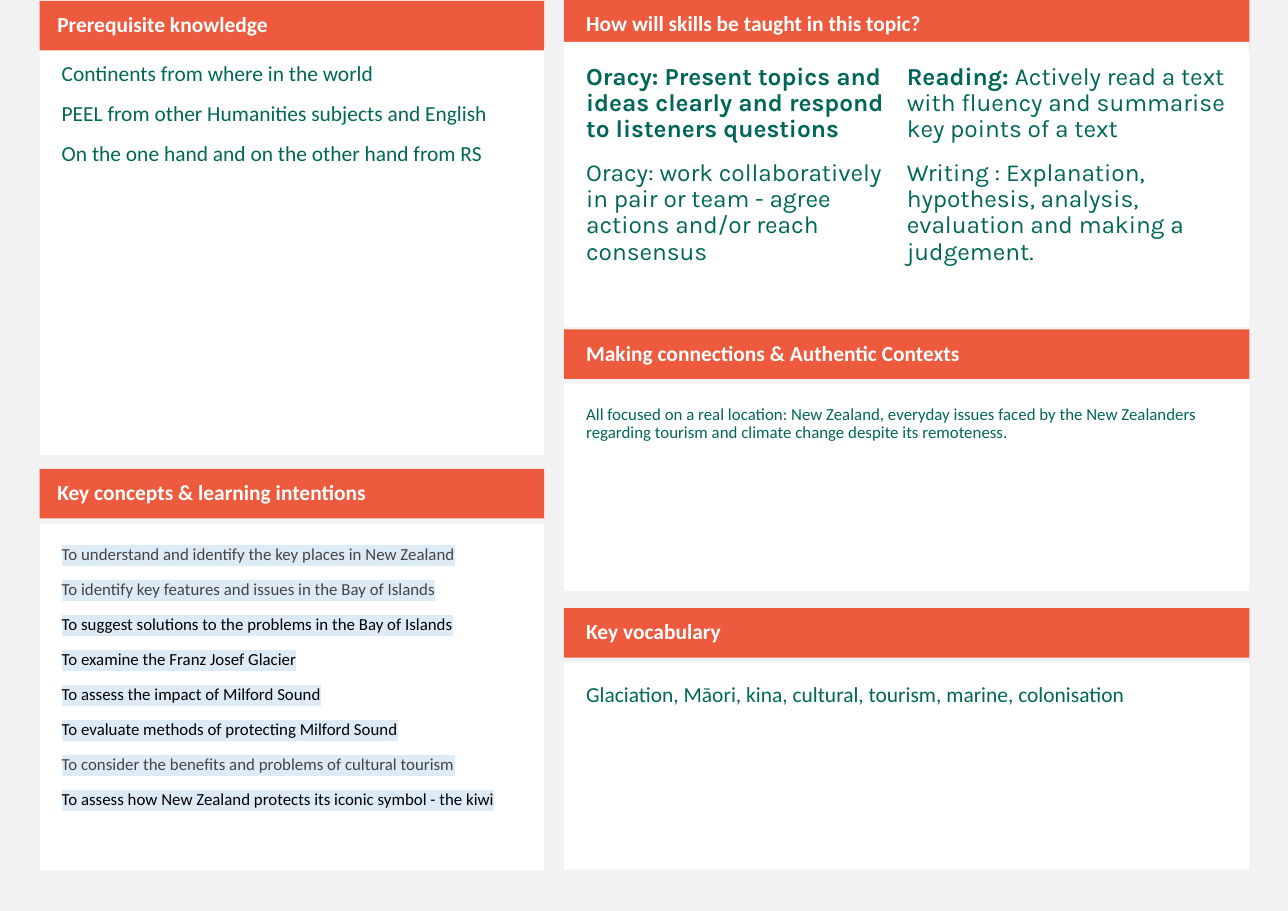
"""Build a one-page topic plan with headed text panels."""
from dataclasses import dataclass

from pptx import Presentation
from pptx.dml.color import RGBColor as Rgb
from pptx.enum.shapes import MSO_SHAPE as Shape
from pptx.enum.text import MSO_ANCHOR as Anchor, PP_ALIGN as Align
from pptx.oxml.ns import qn
from pptx.oxml.xmlchemy import OxmlElement as Element
from pptx.util import Pt


@dataclass(frozen=True)
class Theme:
    back: Rgb = Rgb.from_string("F2F2F2")
    white: Rgb = Rgb.from_string("FFFFFF")
    red: Rgb = Rgb.from_string("ED5A3E")
    green: Rgb = Rgb.from_string("006758")
    grey: Rgb = Rgb.from_string("444444")
    black: Rgb = Rgb.from_string("000000")
    mark: str = "DDEBF7"
    font: str = "Calibri"
    skill: str = "Karla"
    small: int = 11
    mid: int = 14
    large: int = 16


T = Theme()
LEFT = (25.92, 329.76)
RIGHT = (368.64, 447.84)
HEAD = 32.4
PAD = 14.4

PRIOR = [
    "Continents from where in the world",
    "PEEL from other Humanities subjects and English",
    "On the one hand and on the other hand from RS",
]
AIMS = [
    ("To understand and identify the key places in New Zealand", T.grey),
    ("To identify key features and issues in the Bay of Islands", T.grey),
    ("To suggest solutions to the problems in the Bay of Islands", T.black),
    ("To examine the Franz Josef Glacier", T.black),
    ("To assess the impact of Milford Sound", T.black),
    ("To evaluate methods of protecting Milford Sound", T.black),
    ("To consider the benefits and problems of cultural tourism", T.grey),
    ("To assess how New Zealand protects its iconic symbol - the kiwi", T.black),
]
SKILLS = [
    [("Oracy: Present topics and ideas clearly and respond to listeners questions ", True)],
    [("Oracy: work collaboratively in pair or team - agree actions and/or reach consensus ", False)],
    [("Reading: ", True),
     ("Actively read a text with fluency and summarise key points of a text ", False)],
    [("Writing : Explanation, hypothesis, analysis, evaluation and making a judgement.", False)],
]
LINKS = ("All focused on a real location: New Zealand, everyday issues faced by the "
         "New Zealanders regarding tourism and climate change despite its remoteness.")
WORDS = "Glaciation, Māori, kina, cultural, tourism, marine, colonisation"


def add_box(slide, side, top, height, fill, pads):
    """Add a plain filled box and return its text frame."""
    left, width = side
    box = slide.shapes.add_shape(Shape.RECTANGLE, Pt(left), Pt(top), Pt(width), Pt(height))
    box.shadow.inherit = False
    box.fill.solid()
    box.fill.fore_color.rgb = fill
    box.line.fill.background()
    frame = box.text_frame
    frame.word_wrap = True
    frame.vertical_anchor = Anchor.TOP
    frame.margin_left, frame.margin_top, frame.margin_right, frame.margin_bottom = map(Pt, pads)
    return frame


def add_run(para, text, size, color, bold=False, font=T.font, mark=None):
    """Add one styled run, with an optional highlight."""
    run = para.add_run()
    run.text = text
    run.font.size = Pt(size)
    run.font.bold = bold
    run.font.color.rgb = color
    run.font.name = font
    if mark:
        light, shade = Element("a:highlight"), Element("a:srgbClr")
        shade.set("val", mark)
        light.append(shade)
        run.font._element.find(qn("a:solidFill")).addnext(light)


def add_paras(frame, count):
    """Return the given number of spaced paragraphs."""
    paras = [frame.paragraphs[0]] + [frame.add_paragraph() for _ in range(count - 1)]
    for para in paras:
        para.alignment = Align.LEFT
        para.line_spacing = 0.9
        para.space_before = Pt(11)
    return paras


def add_head(slide, side, top, text, inset=PAD):
    """Add a red heading bar."""
    frame = add_box(slide, side, top, HEAD, T.red, (inset, 3.6, 7.2, 3.6))
    frame.vertical_anchor = Anchor.MIDDLE
    add_run(add_paras(frame, 1)[0], text, T.mid, T.white, bold=True)


def add_body(slide, side, top, height, lines, size=T.mid):
    """Add a white panel of green lines."""
    frame = add_box(slide, side, top, height, T.white, [PAD] * 4)
    for para, line in zip(add_paras(frame, len(lines)), lines):
        add_run(para, line, size, T.green)


def add_aims(slide, top, height):
    """Add the panel of highlighted aims."""
    frame = add_box(slide, LEFT, top, height, T.white, [PAD] * 4)
    for para, (text, color) in zip(add_paras(frame, len(AIMS)), AIMS):
        add_run(para, text, T.small, color, mark=T.mark)


def add_skills(slide, top, height):
    """Add the skills panel in two columns."""
    frame = add_box(slide, RIGHT, top, height, T.white, [PAD] * 4)
    frame._txBody.bodyPr.set("numCol", "2")
    for para, runs in zip(add_paras(frame, len(SKILLS)), SKILLS):
        for text, bold in runs:
            add_run(para, text, T.large, T.green, bold, T.skill)


def main():
    """Build and save the slide."""
    deck = Presentation()
    deck.slide_width, deck.slide_height = Pt(841.68), Pt(595.44)
    slide = deck.slides.add_slide(deck.slide_layouts[6])
    slide.background.fill.solid()
    slide.background.fill.fore_color.rgb = T.back

    add_body(slide, LEFT, 26.64, 270.72, PRIOR)
    add_head(slide, LEFT, 0.5, "Prerequisite knowledge", 11.52)
    add_aims(slide, 342.72, 226.08)
    add_head(slide, LEFT, 306.5, "Key concepts & learning intentions", 11.52)

    add_head(slide, RIGHT, 0, "How will skills be taught in this topic?")
    add_skills(slide, 27.36, 186.48)
    add_head(slide, RIGHT, 215.28, "Making connections & Authentic Contexts")
    add_body(slide, RIGHT, 250.8, 135.36, [LINKS], T.small)
    add_head(slide, RIGHT, 397.44, "Key vocabulary")
    add_body(slide, RIGHT, 432.9, 135.36, [WORDS])
    deck.save("out.pptx")


if __name__ == "__main__":
    main()
